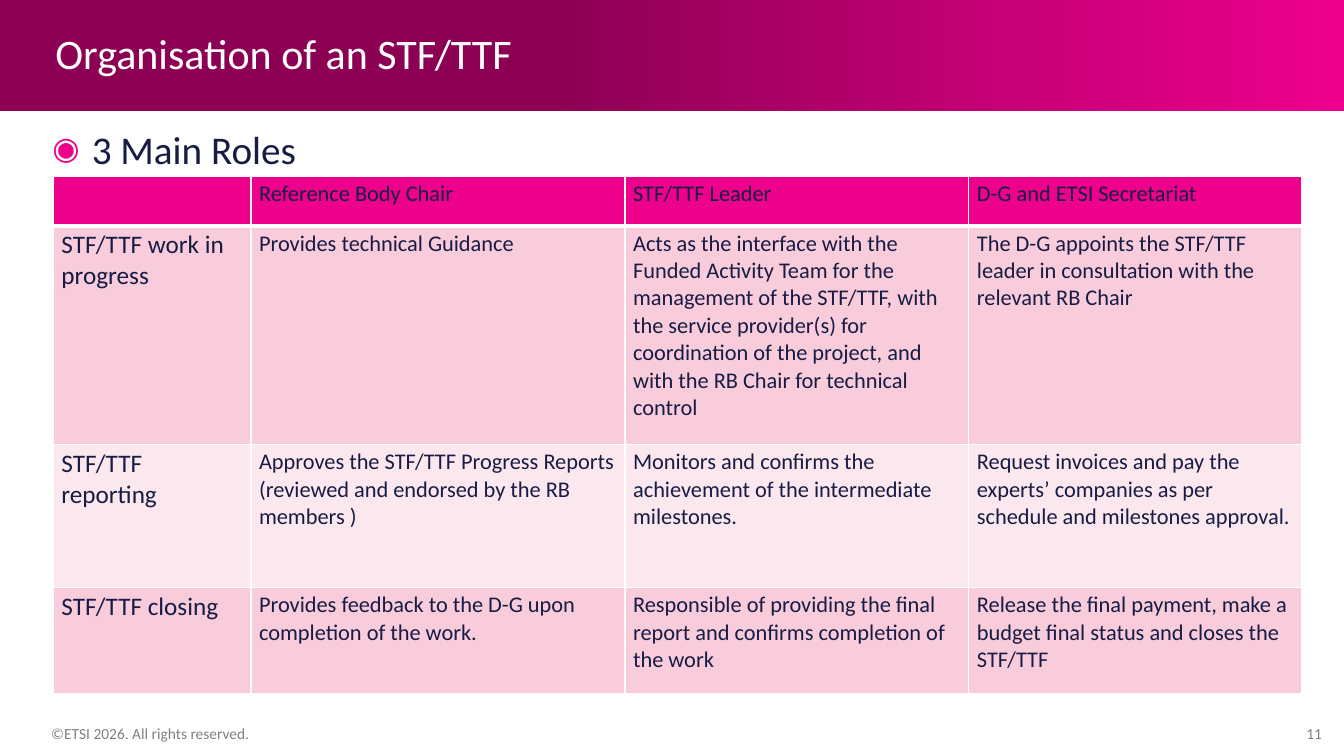
from copy import deepcopy

from lxml.etree import SubElement
from pptx import Presentation
from pptx.dml.color import RGBColor
from pptx.enum.shapes import MSO_SHAPE as Shape
from pptx.enum.text import MSO_ANCHOR as Anchor, MSO_AUTO_SIZE as AutoSize, PP_ALIGN as Align
from pptx.oxml.ns import qn
from pptx.util import Inches, Pt

WHITE = RGBColor(0xFF, 0xFF, 0xFF)
NAVY = RGBColor(0x18, 0x1C, 0x44)
GREY = RGBColor(0x80, 0x80, 0x80)
PLUM = RGBColor(0x8C, 0x00, 0x53)
BERRY = RGBColor(0xC7, 0x00, 0x76)
MAGENTA = RGBColor(0xEC, 0x00, 0x8C)
PINK = RGBColor(0xF8, 0xCC, 0xDA)
PALE_PINK = RGBColor(0xFB, 0xE7, 0xEE)

BAND_STOPS = [(0.41, PLUM), (0.75, BERRY), (1, MAGENTA)]
ROW_FILLS = [MAGENTA, PINK, PALE_PINK, PINK]
COLUMN_WIDTHS = [1.96, 3.71, 3.41, 3.3]
ROW_HEIGHTS = [0.49, 2.17, 1.42, 1.05]
ROLES = [
    ["", "Reference Body Chair", "STF/TTF Leader", "D-G and ETSI Secretariat"],
    ["STF/TTF work in progress",
     "Provides technical Guidance",
     "Acts as the interface with the Funded Activity Team for the management of "
     "the STF/TTF, with the service provider(s) for coordination of the project, "
     "and with the RB Chair for technical control",
     "The D-G appoints the STF/TTF leader in consultation with the relevant RB Chair"],
    ["STF/TTF reporting",
     "Approves the STF/TTF Progress Reports (reviewed and endorsed by the RB members )",
     "Monitors and confirms the achievement of the intermediate milestones.",
     "Request invoices and pay the experts’ companies as per schedule and "
     "milestones approval."],
    ["STF/TTF closing",
     "Provides feedback to the D-G upon completion of the work.",
     "Responsible of providing the final report and confirms completion of the work",
     "Release the final payment, make a budget final status and closes the STF/TTF"],
]


def apply(target, **values):
    for name, value in values.items():
        setattr(target, name, value)


def place(shape, left, top, width, height):
    apply(shape, left=Inches(left), top=Inches(top),
          width=Inches(width), height=Inches(height))


def write(frame, text, size, color, align=Align.LEFT):
    para = frame.paragraphs[0]
    apply(para, alignment=align, space_before=Pt(0))
    span = para.add_run()
    span.text = text
    apply(span.font, name="Calibri", size=Pt(size), bold=False)
    span.font.color.rgb = color
    return para


def add_band(slide):
    band = slide.shapes.add_shape(Shape.RECTANGLE, 0, 0, Inches(13.33), Inches(1.1))
    band.shadow.inherit = False
    band.line.fill.background()
    band.fill.gradient()
    band.fill.gradient_angle = 0
    stop_list = band._element.spPr.find(".//" + qn("a:gsLst"))
    stop_list.append(deepcopy(stop_list[-1]))
    for stop, (position, color) in zip(band.fill.gradient_stops, BAND_STOPS):
        stop.position = position
        stop.color.rgb = color
    slide.shapes._spTree.insert(2, band._element)


def fill_title(title, text):
    place(title, 0.43, 0.24, 9.31, 0.62)
    apply(title.text_frame, vertical_anchor=Anchor.MIDDLE, auto_size=AutoSize.NONE,
          margin_left=Inches(0.12), margin_right=Inches(0.12),
          margin_top=Inches(0.06), margin_bottom=Inches(0.06))
    write(title.text_frame, text, 30, WHITE).line_spacing = 0.9


def fill_body(body, text):
    place(body, 0.42, 1.19, 5.59, 5.12)
    body.text_frame.auto_size = AutoSize.NONE
    para = write(body.text_frame, text, 28, NAVY)
    properties = para._p.get_or_add_pPr()
    properties.set("marL", str(Inches(0.39)))
    properties.set("indent", str(-Inches(0.39)))
    bullet_color = SubElement(properties, qn("a:buClr"))
    SubElement(bullet_color, qn("a:srgbClr"), val=str(MAGENTA))
    SubElement(properties, qn("a:buSzPct"), val="80000")
    SubElement(properties, qn("a:buChar"), char="◉")


def add_note(slide, text, place_at, align):
    box = slide.shapes.add_textbox(*map(Inches, place_at))
    apply(box.text_frame, word_wrap=True, vertical_anchor=Anchor.BOTTOM)
    write(box.text_frame, text, 11, GREY, align)


def add_borders(cell, bottom_width):
    properties = cell._tc.get_or_add_tcPr()
    widths = {"a:lnL": 1, "a:lnR": 1, "a:lnT": 1, "a:lnB": bottom_width}
    for tag, width in widths.items():
        line = SubElement(properties, qn(tag), w=str(Pt(width)))
        fill = SubElement(line, qn("a:solidFill"))
        SubElement(fill, qn("a:srgbClr"), val=str(WHITE))


def add_roles_table(slide):
    frame = slide.shapes.add_table(
        len(ROLES), len(COLUMN_WIDTHS), Inches(0.53), Inches(1.75),
        Inches(sum(COLUMN_WIDTHS)), Inches(sum(ROW_HEIGHTS)))
    table = frame.table
    apply(table, first_row=False, horz_banding=False)
    for column, width in zip(table.columns, COLUMN_WIDTHS):
        column.width = Inches(width)
    for row_index, texts in enumerate(ROLES):
        table.rows[row_index].height = Inches(ROW_HEIGHTS[row_index])
        for column_index, text in enumerate(texts):
            cell = table.cell(row_index, column_index)
            apply(cell, margin_left=Inches(0.08), margin_right=Inches(0.08),
                  margin_top=Inches(0.04), margin_bottom=Inches(0.04))
            add_borders(cell, 1 if row_index else 3)
            cell.fill.solid()
            cell.fill.fore_color.rgb = ROW_FILLS[row_index]
            if text:
                write(cell.text_frame, text, 16 if column_index else 18, NAVY)


def main():
    deck = Presentation()
    apply(deck, slide_width=Inches(13.33), slide_height=Inches(7.5))
    slide = deck.slides.add_slide(deck.slide_layouts[1])
    add_band(slide)
    fill_title(slide.shapes.title, "Organisation of an STF/TTF")
    fill_body(slide.placeholders[1], "3 Main Roles")
    add_roles_table(slide)
    add_note(slide, "©ETSI 2026. All rights reserved.", (0.41, 7.13, 2.41, 0.29), Align.LEFT)
    add_note(slide, "11", (12.28, 7.02, 0.93, 0.4), Align.RIGHT)
    deck.save("out.pptx")


if __name__ == "__main__":
    main()
